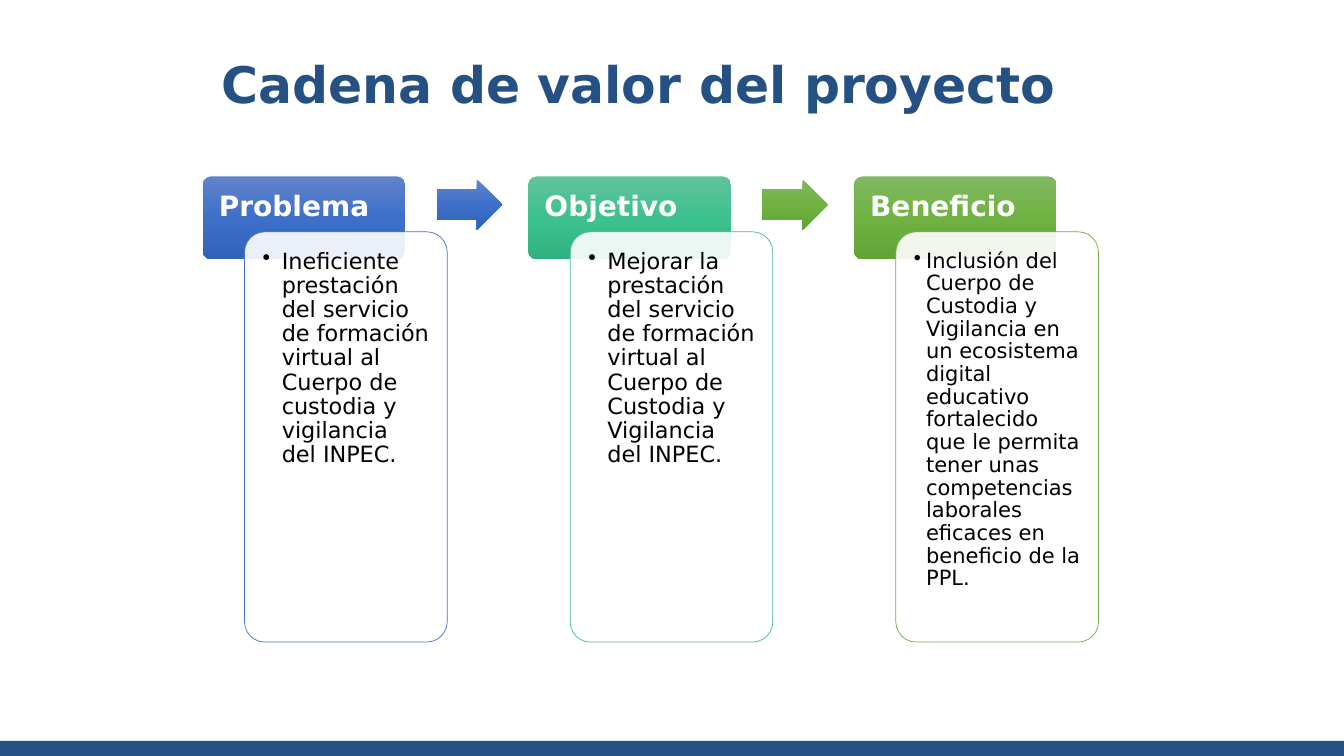
from copy import deepcopy
from dataclasses import dataclass

from lxml.etree import SubElement
from pptx import Presentation
from pptx.dml.color import RGBColor
from pptx.enum.shapes import MSO_SHAPE
from pptx.enum.text import MSO_ANCHOR, PP_ALIGN
from pptx.oxml.ns import qn
from pptx.util import Inches, Pt


@dataclass(frozen=True)
class Theme:
    font: str = "DejaVu Sans"
    navy: str = "255083"
    white: str = "FFFFFF"
    black: str = "000000"
    blue: tuple = ("6183CB", "3E70CA", "3062BB")
    teal: tuple = ("60C39A", "3DC18F", "31B080")
    green: tuple = ("81B861", "6FB242", "62A336")
    title_size: int = 36
    heading_size: int = 20


@dataclass(frozen=True)
class Stage:
    heading: str
    detail: str
    gradient: tuple
    outline: str
    detail_size: int = 16
    indent: float = 0.19


THEME = Theme()
STAGES = (
    Stage(
        "Problema",
        "Ineficiente prestación del servicio de formación virtual al Cuerpo de "
        "custodia y vigilancia del INPEC.",
        THEME.blue, "4472C4",
    ),
    Stage(
        "Objetivo",
        "Mejorar la prestación del servicio de formación virtual al Cuerpo de "
        "Custodia y Vigilancia del INPEC.",
        THEME.teal, "43BB8D",
    ),
    Stage(
        "Beneficio",
        "Inclusión del Cuerpo de Custodia y Vigilancia en un ecosistema digital "
        "educativo fortalecido que le permita tener unas competencias laborales "
        "eficaces en beneficio de la PPL.",
        THEME.green, "70AD47", detail_size=15, indent=0.12,
    ),
)
FIRST_LEFT = 2.01
STAGE_STEP = 3.23
CARD_WIDTH = 2.01


def add_plain_shape(slide, kind, box, adjustments=()):
    shape = slide.shapes.add_shape(kind, *map(Inches, box))
    shape.shadow.inherit = False
    shape.line.fill.background()
    for index, value in enumerate(adjustments):
        shape.adjustments[index] = value
    return shape


def fill_solid(shape, color, opacity=100):
    shape.fill.solid()
    shape.fill.fore_color.rgb = RGBColor.from_string(color)
    if opacity < 100:
        color_element = shape._element.spPr.find(qn("a:solidFill"))[0]
        SubElement(color_element, qn("a:alpha"), val=str(opacity * 1000))


def fill_gradient(shape, colors):
    """Shade from top to bottom through three evenly spaced colours."""
    shape.fill.gradient()
    shape.fill.gradient_angle = 270
    stop_list = shape._element.spPr.find(qn("a:gradFill")).find(qn("a:gsLst"))
    stop_list.append(deepcopy(stop_list[0]))
    for index, (stop, color) in enumerate(zip(shape.fill.gradient_stops, colors)):
        stop.position = index / 2
        stop.color.rgb = RGBColor.from_string(color)


def add_text(slide, box, text, size, color, bold=False, insets=(0.1, 0.05, 0.1, 0.05)):
    """Add a one-paragraph text box and return the paragraph."""
    frame = slide.shapes.add_textbox(*map(Inches, box)).text_frame
    frame.word_wrap = True
    frame.vertical_anchor = MSO_ANCHOR.TOP
    (frame.margin_left, frame.margin_top,
     frame.margin_right, frame.margin_bottom) = map(Inches, insets)
    frame.text = text
    paragraph = frame.paragraphs[0]
    font = paragraph.runs[0].font
    font.name = THEME.font
    font.size = Pt(size)
    font.bold = bold
    font.color.rgb = RGBColor.from_string(color)
    return paragraph


def add_bullet(paragraph, indent):
    properties = paragraph._p.get_or_add_pPr()
    properties.set("marL", str(Inches(indent)))
    properties.set("indent", str(-Inches(indent)))
    SubElement(properties, qn("a:buChar"), char="•")


def add_stage(slide, left, stage):
    header = add_plain_shape(
        slide, MSO_SHAPE.ROUNDED_RECTANGLE, (left, 1.75, CARD_WIDTH, 0.82), (0.1,))
    fill_gradient(header, stage.gradient)
    heading = add_text(
        slide, (left, 1.75, CARD_WIDTH, 0.54), stage.heading, THEME.heading_size,
        THEME.white, bold=True, insets=(0.16, 0.16, 0.16, 0.08))
    heading.line_spacing = 0.9

    card_left = left + 0.415
    card = add_plain_shape(
        slide, MSO_SHAPE.ROUNDED_RECTANGLE, (card_left, 2.3, CARD_WIDTH, 4.07), (0.1,))
    fill_solid(card, THEME.white, opacity=90)
    card.line.color.rgb = RGBColor.from_string(stage.outline)
    card.line.width = Pt(0.5)
    detail = add_text(
        slide, (card_left + 0.06, 2.36, 1.89, 3.96), stage.detail, stage.detail_size,
        THEME.black, insets=(0.12,) * 4)
    add_bullet(detail, stage.indent)
    detail.line_spacing = 0.9


def add_arrow(slide, left, colors):
    arrow = add_plain_shape(
        slide, MSO_SHAPE.RIGHT_ARROW, (left, 1.78, 0.65, 0.5), (0.6, 0.5))
    fill_gradient(arrow, colors)


def main():
    presentation = Presentation()
    presentation.slide_width = Inches(13.33)
    presentation.slide_height = Inches(7.5)
    slide = presentation.slides.add_slide(presentation.slide_layouts[6])

    footer = add_plain_shape(slide, MSO_SHAPE.RECTANGLE, (0, 7.35, 13.33, 0.15))
    fill_solid(footer, THEME.navy)
    title = add_text(
        slide, (1.46, 0.48, 9.75, 0.71), "Cadena de valor del proyecto",
        THEME.title_size, THEME.navy, bold=True)
    title.alignment = PP_ALIGN.CENTER

    lefts = [FIRST_LEFT + index * STAGE_STEP for index in range(len(STAGES))]
    for left, stage in zip(lefts, STAGES):
        add_stage(slide, left, stage)
    for left, colors in zip(lefts, (THEME.blue, THEME.green)):
        add_arrow(slide, left + 2.32, colors)

    presentation.save("out.pptx")


if __name__ == "__main__":
    main()
